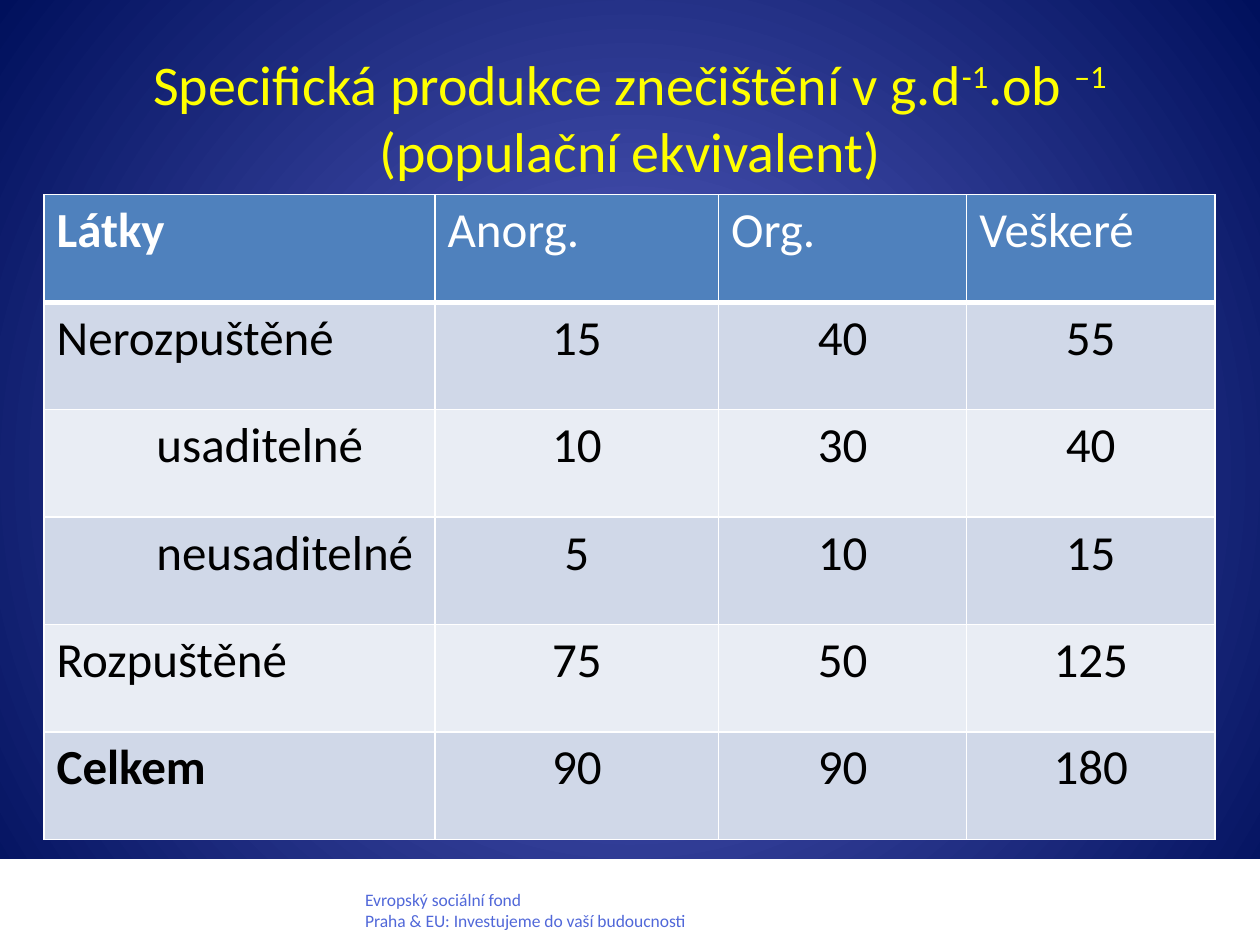
"""Build the slide on specific pollution production per inhabitant."""
from dataclasses import dataclass
from typing import NamedTuple

from pptx import Presentation
from pptx.dml.color import RGBColor as Rgb
from pptx.enum.shapes import MSO_SHAPE as ShapeKind
from pptx.enum.text import MSO_ANCHOR as Anchor, PP_ALIGN as Align
from pptx.oxml import parse_xml
from pptx.oxml.ns import nsdecls
from pptx.slide import Slide
from pptx.table import _Cell as Cell
from pptx.text.text import Font, TextFrame
from pptx.util import Pt


@dataclass(frozen=True)
class Theme:
    font: str = "Calibri"
    title_size: float = 32
    table_size: float = 28
    footer_size: float = 10
    glow: str = "5C64C9"
    night: str = "00105C"
    white: str = "FFFFFF"
    black: str = "000000"
    title: str = "FFFF00"
    footer: str = "5168D9"
    header: str = "4F81BD"
    bands: tuple[str, str] = ("D0D8E8", "E9EDF4")
    border: float = 1
    header_border: float = 3


class Box(NamedTuple):
    left: float
    top: float
    width: float
    height: float

    def lengths(self) -> list[Pt]:
        return [Pt(value) for value in self]


class TitlePart(NamedTuple):
    text: str
    raised: bool = False


class Row(NamedTuple):
    label: str
    values: tuple[str, str, str]
    bold: bool = False
    indent: float = 0


THEME = Theme()
FOOTER_BAND = Box(0, 491, 720, 49)
FOOTER_TEXT = Box(201.6, 504.7, 272, 31.7)
TITLE_BOX = Box(36, 21.6, 648, 90)
TABLE_BOX = Box(25.2, 111.3, 669, 368.4)
COLUMN_WIDTHS = (223.4, 162, 141.8, 141.8)
CELL_MARGIN = 7.2
SUB_INDENT = 57

TITLE = (
    TitlePart("Specifická produkce znečištění v g.d"),
    TitlePart("-1", raised=True),
    TitlePart(".ob "),
    TitlePart("–1", raised=True),
    TitlePart(" (populační ekvivalent)"),
)
FOOTER = "Evropský sociální fond\vPraha & EU: Investujeme do vaší budoucnosti"
ROWS = (
    Row("Látky", ("Anorg.", "Org.", "Veškeré"), bold=True),
    Row("Nerozpuštěné", ("15", "40", "55")),
    Row("usaditelné", ("10", "30", "40"), indent=SUB_INDENT),
    Row("neusaditelné", ("5", "10", "15"), indent=SUB_INDENT),
    Row("Rozpuštěné", ("75", "50", "125")),
    Row("Celkem", ("90", "90", "180"), bold=True),
)


def style_font(font: Font, size: float, color: str, bold: bool = False) -> None:
    font.name = THEME.font
    font.size = Pt(size)
    font.bold = bold
    font.color.rgb = Rgb.from_string(color)


def paint_background(slide: Slide) -> None:
    fill = slide.background.fill
    fill.gradient()
    for stop, color in zip(fill.gradient_stops, (THEME.glow, THEME.night)):
        stop.color.rgb = Rgb.from_string(color)
    linear = next(slide.element.iter("{*}lin"))
    linear.getparent().replace(linear, parse_xml(
        f'<a:path {nsdecls("a")} path="circle">'
        '<a:fillToRect l="50000" t="50000" r="50000" b="50000"/></a:path>'))


def add_text_frame(slide: Slide, box: Box) -> TextFrame:
    frame = slide.shapes.add_textbox(*box.lengths()).text_frame
    frame.word_wrap = True
    return frame


def add_footer(slide: Slide) -> None:
    band = slide.shapes.add_shape(ShapeKind.RECTANGLE, *FOOTER_BAND.lengths())
    band.shadow.inherit = False
    band.fill.solid()
    band.fill.fore_color.rgb = Rgb.from_string(THEME.white)
    band.line.fill.background()
    paragraph = add_text_frame(slide, FOOTER_TEXT).paragraphs[0]
    paragraph.text = FOOTER
    style_font(paragraph.font, THEME.footer_size, THEME.footer)


def add_title(slide: Slide) -> None:
    frame = add_text_frame(slide, TITLE_BOX)
    frame.vertical_anchor = Anchor.MIDDLE
    paragraph = frame.paragraphs[0]
    paragraph.alignment = Align.CENTER
    style_font(paragraph.font, THEME.title_size, THEME.title)
    for part in TITLE:
        run = paragraph.add_run()
        run.text = part.text
        if part.raised:
            run._r.get_or_add_rPr().set("baseline", "30000")


def add_borders(cell: Cell, top: float, bottom: float) -> None:
    properties = cell._tc.get_or_add_tcPr()
    widths = {"L": THEME.border, "R": THEME.border, "T": top, "B": bottom}
    for side, width in widths.items():
        properties.append(parse_xml(
            f'<a:ln{side} {nsdecls("a")} w="{Pt(width)}"><a:solidFill>'
            f'<a:srgbClr val="{THEME.white}"/></a:solidFill></a:ln{side}>'))


def fill_cell(cell: Cell, text: str, row: Row, row_index: int, is_label: bool) -> None:
    is_header = row_index == 0
    add_borders(cell,
                THEME.header_border if row_index == 1 else THEME.border,
                THEME.header_border if is_header else THEME.border)
    cell.fill.solid()
    fill_color = THEME.header if is_header else THEME.bands[(row_index - 1) % 2]
    cell.fill.fore_color.rgb = Rgb.from_string(fill_color)
    cell.margin_left = Pt(CELL_MARGIN + (row.indent if is_label else 0))
    paragraph = cell.text_frame.paragraphs[0]
    paragraph.text = text
    paragraph.alignment = Align.LEFT if is_header or is_label else Align.CENTER
    style_font(paragraph.font, THEME.table_size,
               THEME.white if is_header else THEME.black, row.bold and is_label)


def add_pollution_table(slide: Slide) -> None:
    table = slide.shapes.add_table(
        len(ROWS), len(COLUMN_WIDTHS), *TABLE_BOX.lengths()).table
    table.first_row = False
    table.horz_banding = False
    for column, width in zip(table.columns, COLUMN_WIDTHS):
        column.width = Pt(width)
    for row_index, row in enumerate(ROWS):
        for column_index, text in enumerate((row.label, *row.values)):
            fill_cell(table.cell(row_index, column_index), text, row,
                      row_index, column_index == 0)


def main() -> None:
    presentation = Presentation()
    presentation.slide_width, presentation.slide_height = Pt(720), Pt(540)
    slide = presentation.slides.add_slide(presentation.slide_layouts[6])
    paint_background(slide)
    add_footer(slide)
    add_title(slide)
    add_pollution_table(slide)
    presentation.save("out.pptx")


if __name__ == "__main__":
    main()
